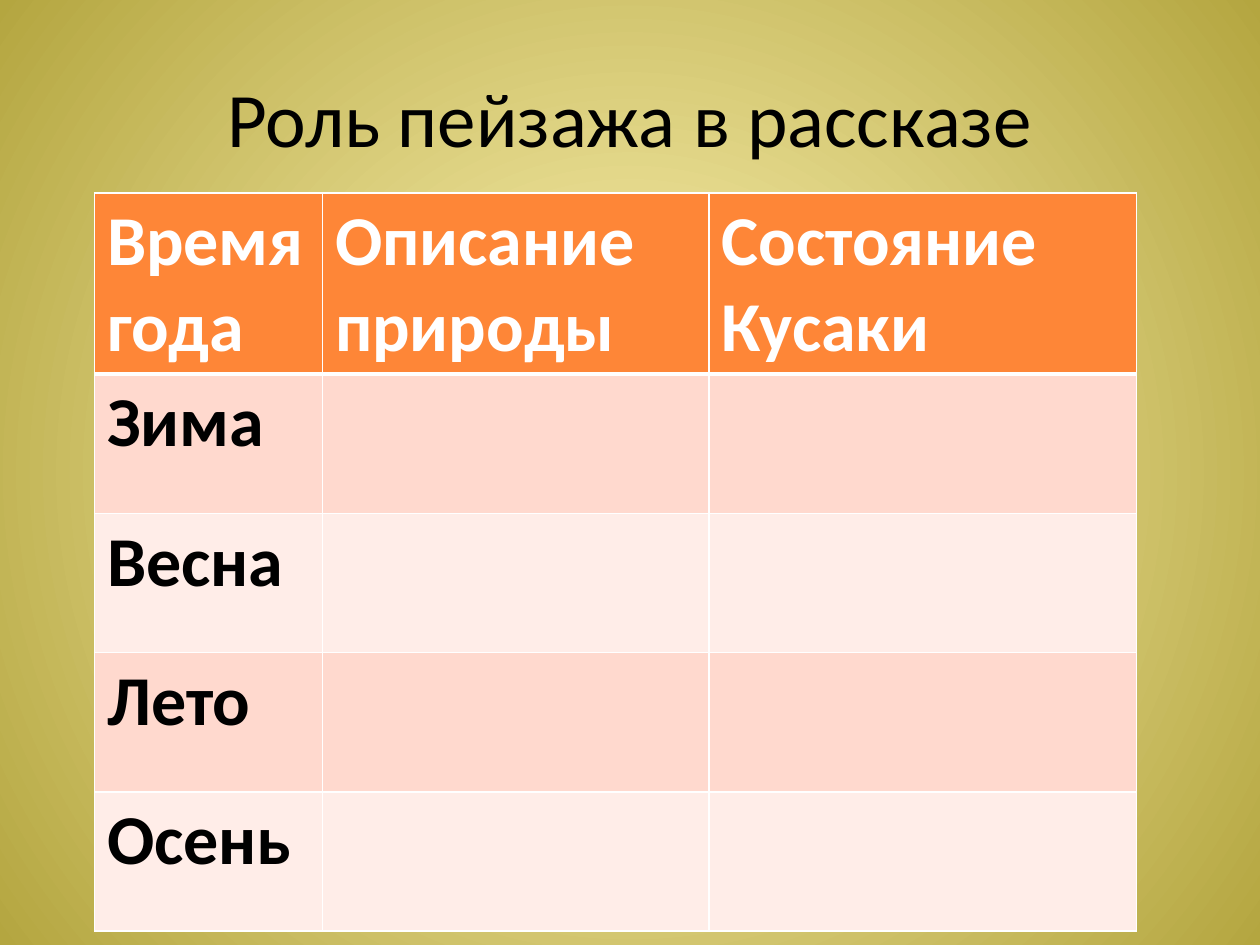
from dataclasses import dataclass

from lxml.etree import SubElement
from pptx import Presentation
from pptx.dml.color import RGBColor as RGB
from pptx.enum.text import MSO_ANCHOR as Anchor, PP_ALIGN as Align
from pptx.oxml import parse_xml
from pptx.oxml.ns import nsdecls, qn
from pptx.slide import Slide
from pptx.table import _Cell as Cell
from pptx.util import Pt


@dataclass(frozen=True)
class Theme:
    font: str = "Calibri"
    title_size: int = 44
    table_size: int = 40
    text: str = "000000"
    header_text: str = "FFFFFF"
    header_fill: str = "FE8637"
    bands: tuple[str, str] = ("FFD9CE", "FFEDE8")
    border: str = "FFFFFF"
    glow: tuple[str, str] = ("FFF5B6", "B4A640")  # centre, edge


@dataclass(frozen=True)
class RowStyle:
    fill: str
    text: str
    top_line: int
    bottom_line: int


THEME = Theme()
HEADINGS = ("Время года", "Описание природы", "Состояние Кусаки")
SEASONS = ("Зима", "Весна", "Лето", "Осень")
COLUMN_WIDTHS = (130.3, 221, 244.1)
ROW_HEIGHT = 79.6
HEADER_HEIGHT = 103.5


def style_text(paragraph, size: int, color: str, bold: bool = False) -> None:
    font = paragraph.font
    for run in paragraph.runs:
        font = run.font
    font.name, font.size, font.bold = THEME.font, Pt(size), bold
    font.color.rgb = RGB.from_string(color)


def paint_background(slide: Slide) -> None:
    fill = slide.background.fill
    fill.gradient()
    for stop, color in zip(fill.gradient_stops, THEME.glow):
        stop.color.rgb = RGB.from_string(color)
    for position, stop in enumerate(fill.gradient_stops):
        stop.position = position
    # Radial shading from the centre of the slide
    linear = slide.element.find(".//" + qn("a:lin"))
    linear.getparent().replace(linear, parse_xml(
        f'<a:path {nsdecls("a")} path="circle">'
        '<a:fillToRect l="50000" t="50000" r="50000" b="50000"/></a:path>'))


def add_title(slide: Slide, text: str) -> None:
    title = slide.shapes.add_textbox(Pt(36), Pt(21.6), Pt(648), Pt(90))
    frame = title.text_frame
    frame.word_wrap = True
    frame.vertical_anchor = Anchor.MIDDLE
    frame.text = text
    frame.paragraphs[0].alignment = Align.CENTER
    style_text(frame.paragraphs[0], THEME.title_size, THEME.text)


def add_border(cell: Cell, side: str, width: int) -> None:
    properties = cell._tc.get_or_add_tcPr()
    line = SubElement(properties, qn(f"a:ln{side}"), w=str(Pt(width)))
    solid = SubElement(line, qn("a:solidFill"))
    SubElement(solid, qn("a:srgbClr"), val=THEME.border)


def fill_cell(cell: Cell, text: str, style: RowStyle) -> None:
    widths = {"L": 1, "R": 1, "T": style.top_line, "B": style.bottom_line}
    for side, width in widths.items():
        add_border(cell, side, width)
    cell.fill.solid()
    cell.fill.fore_color.rgb = RGB.from_string(style.fill)
    cell.text = text
    style_text(cell.text_frame.paragraphs[0], THEME.table_size, style.text, bold=True)


def row_style(row: int) -> RowStyle:
    if row == 0:
        return RowStyle(THEME.header_fill, THEME.header_text, 1, 3)
    return RowStyle(THEME.bands[(row - 1) % 2], THEME.text, 3 if row == 1 else 1, 1)


def add_seasons_table(slide: Slide) -> None:
    rows = [HEADINGS] + [(season, "", "") for season in SEASONS]
    heights = [HEADER_HEIGHT] + [ROW_HEIGHT] * len(SEASONS)
    table = slide.shapes.add_table(
        len(rows), len(HEADINGS), Pt(54), Pt(110.2),
        Pt(sum(COLUMN_WIDTHS)), Pt(sum(heights))).table
    for column, width in zip(table.columns, COLUMN_WIDTHS):
        column.width = Pt(width)
    for index, (texts, height) in enumerate(zip(rows, heights)):
        table.rows[index].height = Pt(height)
        for cell, text in zip(table.rows[index].cells, texts):
            fill_cell(cell, text, row_style(index))


def main() -> None:
    deck = Presentation()
    deck.slide_width, deck.slide_height = Pt(720), Pt(540)
    slide = deck.slides.add_slide(deck.slide_layouts[6])

    paint_background(slide)
    add_title(slide, "Роль пейзажа в рассказе")
    add_seasons_table(slide)

    deck.save("out.pptx")


if __name__ == "__main__":
    main()
